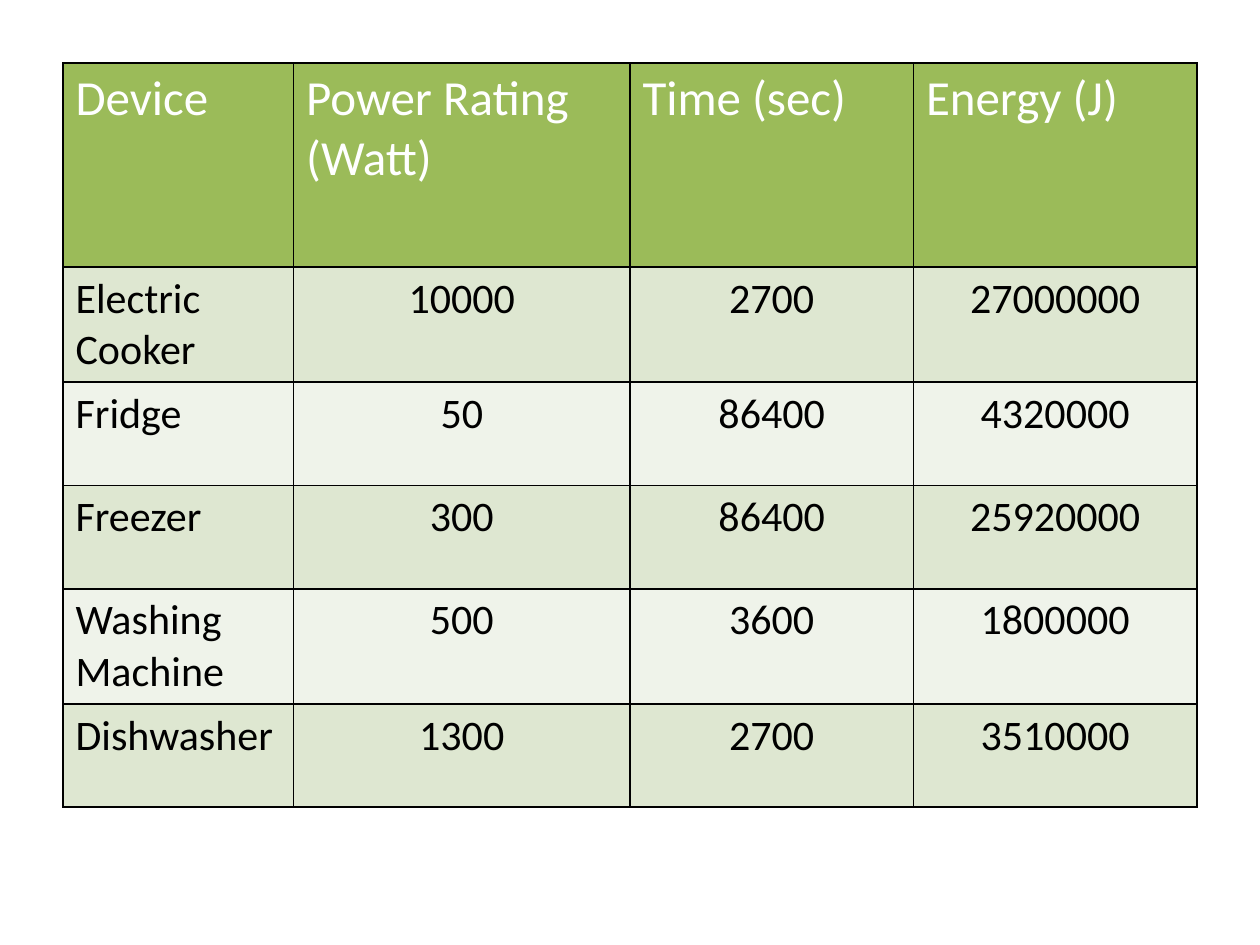
from dataclasses import dataclass

from lxml.etree import SubElement
from pptx import Presentation
from pptx.dml.color import RGBColor
from pptx.enum.text import PP_ALIGN
from pptx.oxml.ns import qn
from pptx.table import _Cell as Cell
from pptx.util import Emu, Pt


@dataclass(frozen=True)
class Theme:
    font: str = "Calibri"
    head_size: int = 28
    body_size: int = 24
    head_ink: str = "FFFFFF"
    body_ink: str = "000000"
    head_fill: str = "9BBB59"
    bands: tuple[str, str] = ("DEE7D1", "EFF3EA")
    line: str = "000000"
    line_width: int = 1


@dataclass(frozen=True)
class Device:
    name: str
    power: int
    time: int
    energy: int

    def texts(self) -> list[str]:
        return [self.name, str(self.power), str(self.time), str(self.energy)]


THEME = Theme()
SCALE = 9144  # EMU in one px, at 100 px to the inch
LEFT = TOP = 50
COLS = (183, 267, 225, 225)
ROWS = (162, 90, 82, 82, 90, 82)
HEADS = ("Device", "Power Rating (Watt)", "Time (sec)", "Energy (J)")
DEVICES = (
    Device("Electric Cooker", 10000, 2700, 27000000),
    Device("Fridge", 50, 86400, 4320000),
    Device("Freezer", 300, 86400, 25920000),
    Device("Washing Machine", 500, 3600, 1800000),
    Device("Dishwasher", 1300, 2700, 3510000),
)


def px(count: int) -> Emu:
    return Emu(count * SCALE)


def write(cell: Cell, text: str, *, size: int, ink: str,
          align: PP_ALIGN = PP_ALIGN.LEFT) -> None:
    para = cell.text_frame.paragraphs[0]
    para.alignment = align
    run = para.add_run()
    run.text = text
    run.font.name = THEME.font
    run.font.size = Pt(size)
    run.font.bold = False
    run.font.color.rgb = RGBColor.from_string(ink)


def paint(cell: Cell, fill: str) -> None:
    """Rule all four sides of the cell, then fill it."""
    props = cell._tc.get_or_add_tcPr()
    for side in ("a:lnL", "a:lnR", "a:lnT", "a:lnB"):
        line = SubElement(props, qn(side), w=str(Pt(THEME.line_width)))
        solid = SubElement(line, qn("a:solidFill"))
        SubElement(solid, qn("a:srgbClr"), val=THEME.line)
    cell.fill.solid()
    cell.fill.fore_color.rgb = RGBColor.from_string(fill)


def main() -> None:
    deck = Presentation()
    deck.slide_width, deck.slide_height = px(1000), px(750)
    slide = deck.slides.add_slide(deck.slide_layouts[6])
    table = slide.shapes.add_table(
        len(ROWS), len(COLS), px(LEFT), px(TOP), px(sum(COLS)), px(sum(ROWS))
    ).table
    for col, width in zip(table.columns, COLS):
        col.width = px(width)
    for row, height in zip(table.rows, ROWS):
        row.height = px(height)

    for cell, text in zip(table.rows[0].cells, HEADS):
        paint(cell, THEME.head_fill)
        write(cell, text, size=THEME.head_size, ink=THEME.head_ink)
    for index, device in enumerate(DEVICES):
        cells = table.rows[index + 1].cells
        for col, (cell, text) in enumerate(zip(cells, device.texts())):
            paint(cell, THEME.bands[index % 2])
            write(cell, text, size=THEME.body_size, ink=THEME.body_ink,
                  align=PP_ALIGN.CENTER if col else PP_ALIGN.LEFT)

    deck.save("out.pptx")


if __name__ == "__main__":
    main()
